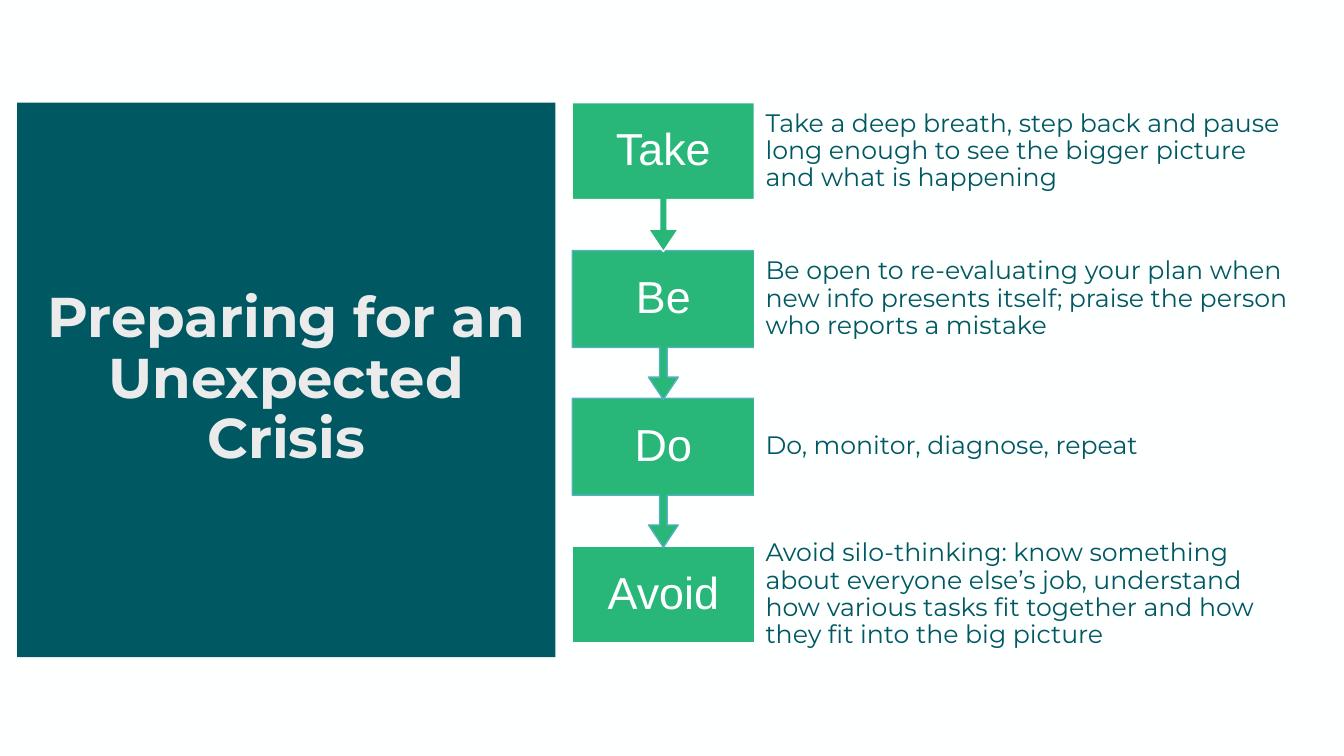
"""Build the crisis preparation slide: a title panel beside four linked steps."""
from dataclasses import dataclass

from pptx import Presentation
from pptx import util as u
from pptx.dml.color import RGBColor
from pptx.enum import shapes, text

TEAL, GREEN, BLUE = "005862", "28B679", "54B0BD"
WHITE, PALE = "FEFFFF", "EBEBEB"
TOP, PITCH, BOX_HEIGHT, CALLOUT_HEIGHT = 73.4, 105.6, 69.1, 106.3
HEADING_LEFT, HEADING_WIDTH = 408.8, 130.1
DETAIL_LEFT, DETAIL_WIDTH = 538.9, 390.2
CALLOUT_ADJUSTMENTS = (0.05, 0.1, 0.15, 0.65)


@dataclass
class Step:
    heading: str
    detail: str
    outline: str = WHITE
    has_arrow: bool = True


STEPS = [
    Step("Take", "Take a deep breath, step back and pause long enough to see "
         "the bigger picture and what is happening"),
    Step("Be", "Be open to re-evaluating your plan when new info presents "
         "itself; praise the person who reports a mistake", BLUE),
    Step("Do", "Do, monitor, diagnose, repeat", BLUE),
    Step("Avoid", "Avoid silo-thinking: know something about everyone else’s "
         "job, understand how various tasks fit together and how they fit "
         "into the big picture", has_arrow=False),
]


def paint(target, color: str) -> None:
    target.solid()
    target.fore_color.rgb = RGBColor.from_string(color)


def write(box, words: str, *, size: float, font: str, color: str,
          bold: bool = False, centered: bool = True,
          side: float = 7.2, edge: float = 3.6) -> None:
    frame = box.text_frame
    frame.word_wrap = True
    frame.auto_size = text.MSO_AUTO_SIZE.NONE
    frame.vertical_anchor = text.MSO_ANCHOR.MIDDLE
    frame.margin_left = frame.margin_right = u.Pt(side)
    frame.margin_top = frame.margin_bottom = u.Pt(edge)
    para = frame.paragraphs[0]
    para.alignment = text.PP_ALIGN.CENTER if centered else text.PP_ALIGN.LEFT
    para.line_spacing = 0.9
    para.space_before = u.Pt(0)
    span = para.add_run()
    span.text = words
    span.font.size, span.font.name, span.font.bold = u.Pt(size), font, bold
    paint(span.font.fill, color)


def add_block(page, kind, left: float, top: float, width: float,
              height: float, fill: str, outline: str):
    block = page.shapes.add_shape(
        kind, u.Pt(left), u.Pt(top), u.Pt(width), u.Pt(height))
    block.shadow.inherit = False
    paint(block.fill, fill)
    paint(block.line.fill, outline)
    block.line.width = u.Pt(1)
    return block


def add_title(page) -> None:
    title = page.shapes.title
    title.left, title.top = u.Pt(12.2), u.Pt(TOP)
    title.width, title.height = u.Pt(384.5), u.Pt(396)
    paint(title.fill, TEAL)
    write(title, "Preparing for an Unexpected Crisis", size=40,
          font="Montserrat", color=PALE, bold=True)


def add_step(page, step: Step, top: float) -> None:
    kinds = shapes.MSO_SHAPE
    if step.has_arrow:
        callout = add_block(page, kinds.UP_ARROW_CALLOUT, HEADING_LEFT, top,
                            HEADING_WIDTH, CALLOUT_HEIGHT, GREEN, step.outline)
        callout.rotation = 180
        for index, value in enumerate(CALLOUT_ADJUSTMENTS):
            callout.adjustments[index] = value
    else:
        add_block(page, kinds.RECTANGLE, HEADING_LEFT, top,
                  HEADING_WIDTH, BOX_HEIGHT, GREEN, step.outline)
    heading = page.shapes.add_textbox(
        u.Pt(HEADING_LEFT), u.Pt(top), u.Pt(HEADING_WIDTH), u.Pt(BOX_HEIGHT))
    write(heading, step.heading, size=32, font="Arial", color=WHITE,
          side=9.4, edge=18)
    detail = add_block(page, kinds.RECTANGLE, DETAIL_LEFT, top,
                       DETAIL_WIDTH, BOX_HEIGHT, WHITE, WHITE)
    write(detail, step.detail, size=18, font="Montserrat", color=TEAL,
          centered=False, side=7.9, edge=18)


def main() -> None:
    deck = Presentation()
    deck.slide_width, deck.slide_height = u.Pt(960), u.Pt(540)
    page = deck.slides.add_slide(deck.slide_layouts[5])
    paint(page.background.fill, WHITE)
    add_title(page)
    for index, step in reversed(list(enumerate(STEPS))):
        add_step(page, step, TOP + index * PITCH)
    deck.save("out.pptx")


if __name__ == "__main__":
    main()
